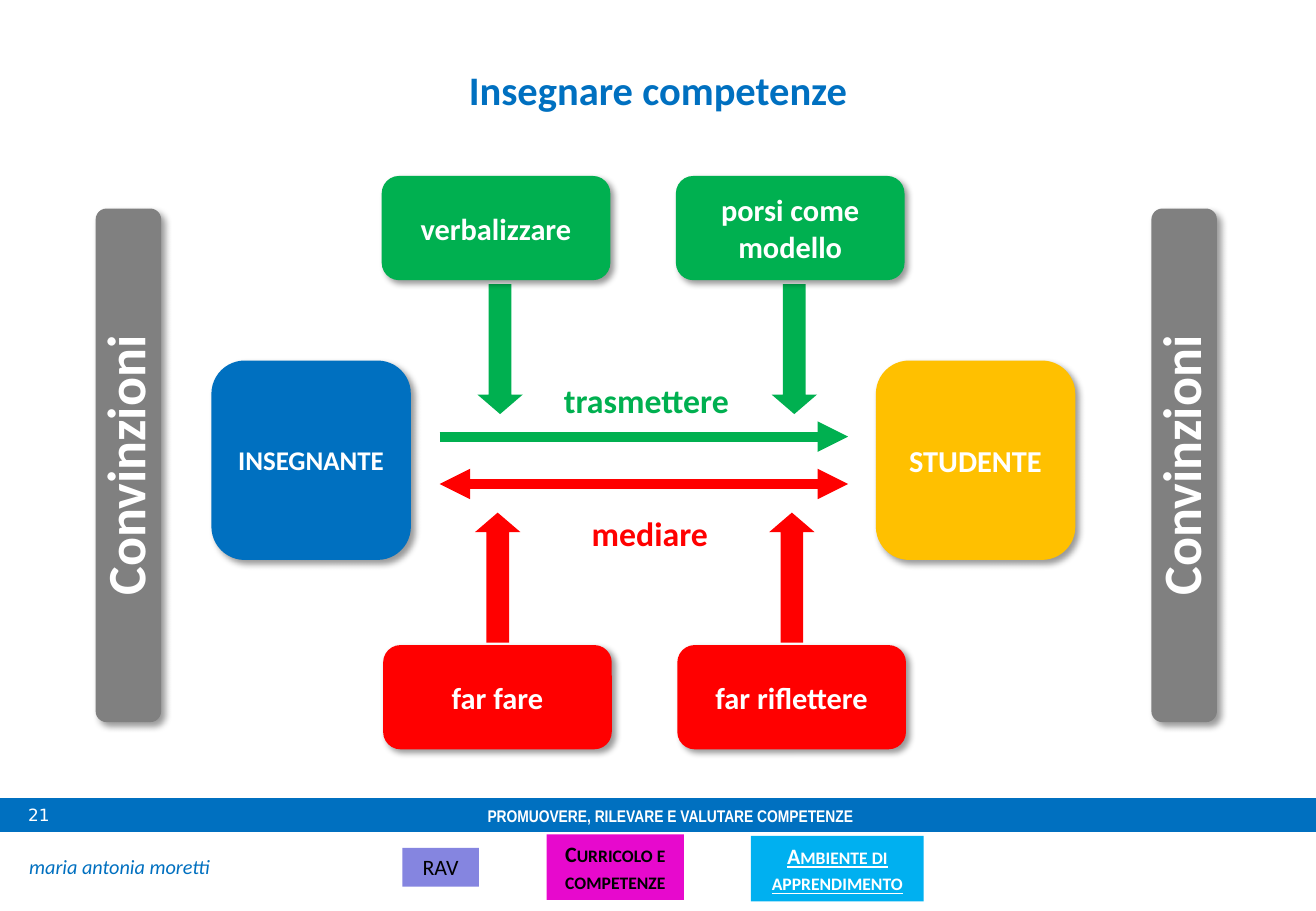
from lxml import etree
from pptx import Presentation
from pptx.dml.color import RGBColor
from pptx.enum.shapes import MSO_CONNECTOR, MSO_SHAPE as SHAPE
from pptx.enum.text import MSO_ANCHOR as ANCHOR, PP_ALIGN as ALIGN
from pptx.oxml.ns import qn
from pptx.util import Cm, Pt

BLUE, GREEN, RED, WHITE = "0070C0", "00B050", "FF0000", "FFFFFF"
GREY, YELLOW, BLACK = "808080", "FFC000", "000000"
SLIDE_W, SLIDE_H = 27.51, 19.05


def rgb(value):
    return RGBColor.from_string(value)


def write(shape, text, size=18, color=WHITE, font="Calibri", bold=True,
          italic=False, underline=False, small_caps=False, align=ALIGN.CENTER,
          anchor=ANCHOR.MIDDLE, inset=(0.25, 0.13), wrap=True, spacing=None):
    frame = shape.text_frame
    frame.word_wrap = wrap
    frame.vertical_anchor = anchor
    frame.margin_left = frame.margin_right = Cm(inset[0])
    frame.margin_top = frame.margin_bottom = Cm(inset[1])
    frame.text = text
    for paragraph in frame.paragraphs:
        paragraph.alignment = align
        if spacing:
            paragraph.line_spacing = spacing
        for run in paragraph.runs:
            run.font.name = font
            run.font.size = Pt(size)
            run.font.bold = bold
            run.font.italic = italic
            run.font.underline = underline
            run.font.color.rgb = rgb(color)
            if small_caps:
                run.font._element.set("cap", "small")


def add_label(slide, box, text, **text_format):
    label = slide.shapes.add_textbox(*map(Cm, box))
    write(label, text, **{"anchor": ANCHOR.TOP, **text_format})


def add_block(slide, preset, box, fill, shadow=False):
    block = slide.shapes.add_shape(preset, *map(Cm, box))
    block.fill.solid()
    block.fill.fore_color.rgb = rgb(fill)
    block.line.fill.background()
    block.shadow.inherit = False
    if shadow:
        effects = block._element.spPr.find(qn("a:effectLst"))
        outer = etree.SubElement(effects, qn("a:outerShdw"), blurRad=str(Pt(4)),
                                 dist=str(Pt(3)), dir="2700000", rotWithShape="0")
        tint = etree.SubElement(outer, qn("a:srgbClr"), val=BLACK)
        etree.SubElement(tint, qn("a:alpha"), val="40000")
    return block


def add_card(slide, box, fill, text, **text_format):
    card = add_block(slide, SHAPE.ROUNDED_RECTANGLE, box, fill, shadow=True)
    write(card, text, **text_format)
    return card


def add_flow(slide, left, right, y, color, ends):
    flow = slide.shapes.add_connector(MSO_CONNECTOR.STRAIGHT,
                                      Cm(left), Cm(y), Cm(right), Cm(y))
    flow.line.color.rgb = rgb(color)
    flow.line.width = Pt(6)
    for end in ends:
        etree.SubElement(flow.line._get_or_add_ln(), qn(f"a:{end}"), type="triangle")
    etree.SubElement(flow._element.spPr, qn("a:effectLst"))


def add_beliefs(slide, left, top, width, height):
    center_x, center_y = left + width / 2, top + height / 2
    upright = (center_x - height / 2, center_y - width / 2, height, width)
    beliefs = add_card(slide, upright, GREY, "Convinzioni", size=32,
                       anchor=ANCHOR.TOP, inset=(0, 0), spacing=0.9)
    beliefs.rotation = 270


def add_actions(slide, left, card_top, arrow_left, arrow_top, preset, fill, texts):
    for column, text in enumerate(texts):
        shift = column * 6.15
        arrow = add_block(slide, preset, (arrow_left + shift, arrow_top, 0.95, 2.72), fill)
        arrow.adjustments[0] = 0.5
        arrow.adjustments[1] = 0.43
        add_card(slide, (left + shift, card_top, 4.78, 2.18), fill, text,
                 inset=(0, 0), wrap=False)


def add_diagram(slide, left, top, width, height):
    bar_w, bar_h, actor = 1.37, 10.74, 4.17
    for bar_left in (left, left + width - bar_w):
        add_beliefs(slide, bar_left, top + 0.68, bar_w, bar_h)

    add_actions(slide, left + 5.98, top, left + 7.98, top + 2.26,
                SHAPE.DOWN_ARROW, GREEN, ("verbalizzare", "porsi come\nmodello"))
    add_actions(slide, left + 6.01, top + height - 2.18, left + 7.93, top + 7.04,
                SHAPE.UP_ARROW, RED, ("far fare", "far riflettere"))

    actor_top = top + 3.86
    add_card(slide, (left + 2.42, actor_top, actor, actor), BLUE, "INSEGNANTE", size=16)
    add_card(slide, (left + 16.31, actor_top, actor, actor), YELLOW, "STUDENTE")

    flow_left, flow_right = left + 7.19, left + 15.73
    add_flow(slide, flow_left, flow_right, top + 5.45, GREEN, ["tailEnd"])
    add_flow(slide, flow_left, flow_right, top + 6.44, RED, ["headEnd", "tailEnd"])
    caption = dict(size=20, align=ALIGN.LEFT, inset=(0, 0), wrap=False)
    add_label(slide, (left + 9.79, top + 4.27, 3.5, 0.86), "trasmettere",
              color=GREEN, **caption)
    add_label(slide, (left + 10.37, top + 7.04, 2.46, 0.86), "mediare",
              color=RED, **caption)


def add_footer(slide, left, top, width):
    add_block(slide, SHAPE.RECTANGLE, (left, top, width, 0.71), BLUE)
    tight = dict(size=10, inset=(0.18, 0.1))
    add_label(slide, (left + 0.41, top + 0.03, 0.97, 0.61), "21", font="DejaVu Sans",
              bold=False, align=ALIGN.LEFT, wrap=False, **tight)
    add_label(slide, (left + 1.96, top + 0.05, 24.1, 0.61),
              "PROMUOVERE, RILEVARE E VALUTARE COMPETENZE", font="Arial Narrow", **tight)
    add_label(slide, (left + 0.36, top + 1.04, 4.39, 0.76), "maria antonia moretti",
              size=12, color=BLUE, bold=False, italic=True, align=ALIGN.LEFT)

    topics = [
        ((8.41, 1.04, 1.6, 0.81), "8585E0", "RAV",
         dict(color=BLACK, bold=False, anchor=ANCHOR.TOP)),
        ((11.43, 0.76, 2.87, 1.37), "E709CD", "Curricolo e competenze",
         dict(color=BLACK, small_caps=True)),
        ((15.7, 0.79, 3.61, 1.37), "00B0F0", "Ambiente di apprendimento",
         dict(underline=True, small_caps=True)),
    ]
    for (x, y, topic_w, topic_h), fill, text, text_format in topics:
        topic = add_block(slide, SHAPE.RECTANGLE,
                          (left + x, top + y, topic_w, topic_h), fill)
        write(topic, text, size=13, **text_format)


def main():
    deck = Presentation()
    deck.slide_width, deck.slide_height = Cm(SLIDE_W), Cm(SLIDE_H)
    slide = deck.slides.add_slide(deck.slide_layouts[6])
    add_footer(slide, 0, 16.69, SLIDE_W)
    add_label(slide, (0, 1.22, SLIDE_W, 1.27), "Insegnare competenze",
              size=24, color=BLUE)
    add_diagram(slide, 2, 3.68, 23.44, 11.99)
    deck.save("out.pptx")


if __name__ == "__main__":
    main()
